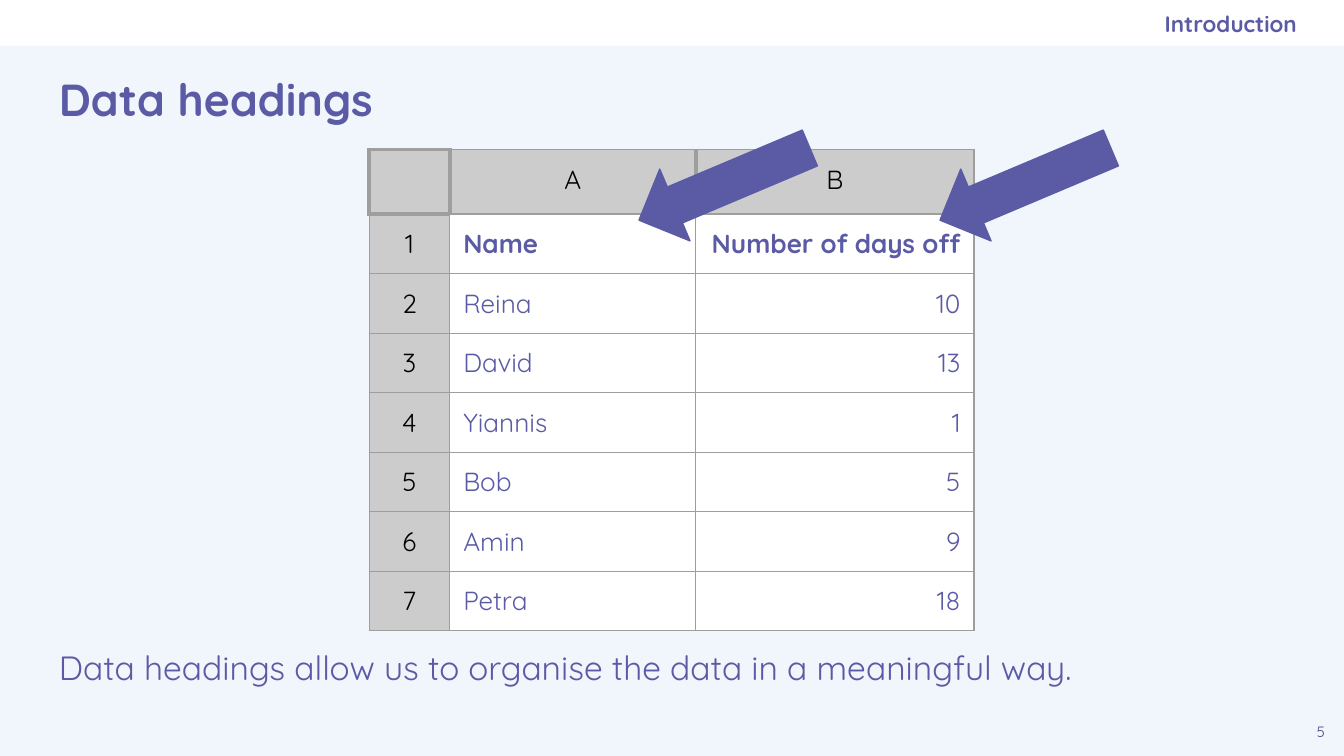
import pptx
import pptx.util
import pptx.dml.color
import pptx.enum.shapes
import pptx.enum.text
import pptx.oxml
import pptx.oxml.ns
import lxml.etree

COLORS = {
    "background": "F1F5FC",
    "white": "FFFFFF",
    "purple": "5B5BA5",
    "page_number": "494985",
    "header": "CCCCCC",
    "border": "9E9E9E",
    "black": "000000",
}
FONT = "Quicksand"
ALIGN = pptx.enum.text.PP_ALIGN
ANCHOR = pptx.enum.text.MSO_ANCHOR
SHAPES = pptx.enum.shapes.MSO_SHAPE

presentation = pptx.Presentation()
presentation.slide_width = pptx.util.Inches(10)
presentation.slide_height = presentation.slide_width * 9 // 16
COLUMN = ROW = presentation.slide_width // 100
INSET = COLUMN

slide = presentation.slides.add_slide(presentation.slide_layouts[6])
slide.background.fill.solid()
slide.background.fill.fore_color.rgb = pptx.dml.color.RGBColor.from_string(COLORS["background"])


def add_block(kind, left, top, width, height, color):
    shape = slide.shapes.add_shape(
        kind, int(left * COLUMN), int(top * ROW), int(width * COLUMN), int(height * ROW)
    )
    shape.shadow.inherit = False
    shape.fill.solid()
    shape.fill.fore_color.rgb = pptx.dml.color.RGBColor.from_string(COLORS[color])
    shape.line.fill.background()
    return shape


def write(frame, text, size, color, bold=False, align=ALIGN.LEFT):
    paragraph = frame.paragraphs[0]
    paragraph.text = text
    paragraph.alignment = align
    paragraph.font.name = FONT
    paragraph.font.size = pptx.util.Pt(size)
    paragraph.font.bold = bold
    paragraph.font.color.rgb = pptx.dml.color.RGBColor.from_string(COLORS[color])
    return paragraph


add_block(SHAPES.RECTANGLE, 0, 0, 100, 3.4, "white")

texts = [
    ("Data headings allow us to organise the data in a meaningful way.",
     (3.4, 46.7, 93.2, 7.6), 18, "purple", False, ALIGN.LEFT, ANCHOR.TOP, INSET),
    ("Data headings",
     (3.4, 3.55, 93.2, 7.6), 24, "purple", True, ALIGN.LEFT, ANCHOR.MIDDLE, INSET),
    ("5",
     (96.6, 53.1, 3.4, 3.15), 8, "page_number", False, ALIGN.CENTER, ANCHOR.TOP, INSET),
    ("Introduction",
     (57.5, 0.05, 39, 3.4), 12, "purple", True, ALIGN.RIGHT, ANCHOR.MIDDLE, 0),
]
for text, (left, top, width, height), size, color, bold, align, anchor, right_inset in texts:
    shape = slide.shapes.add_textbox(
        int(left * COLUMN), int(top * ROW), int(width * COLUMN), int(height * ROW)
    )
    frame = shape.text_frame
    frame.word_wrap = True
    frame.vertical_anchor = anchor
    frame.margin_left = frame.margin_top = frame.margin_bottom = INSET
    frame.margin_right = right_inset
    paragraph = write(frame, text, size, color, bold, align)
    if size == 18:
        paragraph.line_spacing = 1.15
        paragraph.space_after = pptx.util.Pt(16)

records = [
    ("Name", "Number of days off"),
    ("Reina", "10"),
    ("David", "13"),
    ("Yiannis", "1"),
    ("Bob", "5"),
    ("Amin", "9"),
    ("Petra", "18"),
]
grid = [("", "A", "B")] + [(str(number), *record) for number, record in enumerate(records, 1)]
column_widths = [6, 18.3, 20.7]
row_heights = [4.8] + [4.43] * len(records)

table = slide.shapes.add_table(
    len(grid), len(column_widths), int(27.47 * COLUMN), int(11.13 * ROW),
    int(sum(column_widths) * COLUMN), int(sum(row_heights) * ROW)
).table
for column, width in zip(table.columns, column_widths):
    column.width = int(width * COLUMN)
for row, height in zip(table.rows, row_heights):
    row.height = int(height * ROW)

for row_index, values in enumerate(grid):
    for column_index, value in enumerate(values):
        cell = table.cell(row_index, column_index)
        cell.margin_left = cell.margin_right = cell.margin_top = cell.margin_bottom = INSET
        is_header = row_index == 0 or column_index == 0
        align = ALIGN.CENTER if is_header else (ALIGN.LEFT, ALIGN.RIGHT)[column_index - 1]
        write(cell.text_frame, value, 14, "black" if is_header else "purple",
              row_index == 1 and not is_header, align)

        is_corner = row_index == 0 and column_index == 0
        thick = {
            "lnL": row_index == 0,
            "lnR": is_corner or (row_index == 0 and column_index == 1),
            "lnT": is_corner or (row_index == 1 and column_index == 0),
            "lnB": is_corner,
        }
        properties = cell._tc.get_or_add_tcPr()
        for side, is_thick in thick.items():
            line = lxml.etree.SubElement(properties, pptx.oxml.ns.qn(f"a:{side}"))
            line.set("w", str(pptx.util.Pt(2.25 if is_thick else 0.75)))
            line_fill = lxml.etree.SubElement(line, pptx.oxml.ns.qn("a:solidFill"))
            lxml.etree.SubElement(
                line_fill, pptx.oxml.ns.qn("a:srgbClr"), val=COLORS["border"]
            )
        cell.fill.solid()
        cell.fill.fore_color.rgb = pptx.dml.color.RGBColor.from_string(
            COLORS["header" if is_header else "white"]
        )

for left in (69.4, 47):
    arrow = add_block(SHAPES.LEFT_ARROW, left, 10.8, 13.8, 5.8, "purple")
    arrow.rotation = 337.1
    arrow.line.color.rgb = pptx.dml.color.RGBColor.from_string(COLORS["purple"])
    arrow.line.width = pptx.util.Pt(0.75)

presentation.save("out.pptx")
